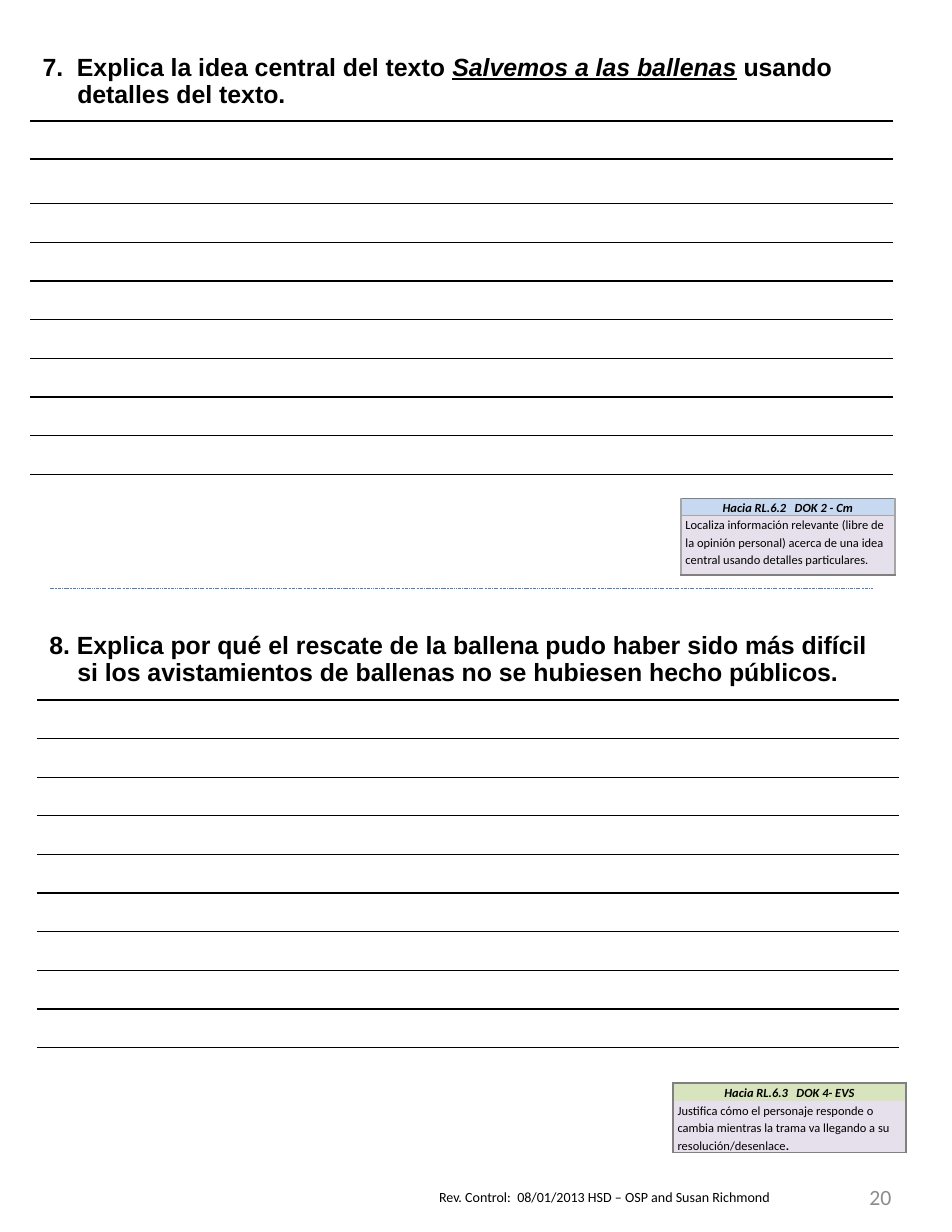
from dataclasses import dataclass

from lxml import etree
from pptx import Presentation
from pptx.dml.color import RGBColor
from pptx.enum.dml import MSO_LINE
from pptx.enum.shapes import MSO_CONNECTOR
from pptx.enum.text import MSO_ANCHOR, PP_ALIGN
from pptx.oxml.ns import qn
from pptx.util import Inches, Pt

STRAIGHT = MSO_CONNECTOR.STRAIGHT
DASHED = MSO_LINE.DASH_DOT_DOT
MIDDLE = MSO_ANCHOR.MIDDLE
TOP = MSO_ANCHOR.TOP
LEFT = PP_ALIGN.LEFT
CENTER = PP_ALIGN.CENTER
RIGHT = PP_ALIGN.RIGHT
BLACK = "000000"
GRAY = "808080"
LIGHT_GRAY = "A6A6A6"
LAVENDER = "E6E0EC"


@dataclass(frozen=True)
class Words:
    text: str
    size: float
    font: str = "Calibri"
    color: str = BLACK
    bold: bool = False
    italic: bool = False
    underline: bool = False


@dataclass(frozen=True)
class Question:
    left: float
    top: float
    indent: float
    prompt: tuple[Words, ...]
    rows: tuple[float, ...]


@dataclass(frozen=True)
class Standard:
    left: float
    top: float
    width: float
    rows: tuple[float, float]
    code: str
    code_fill: str
    goal: tuple[Words, ...]
    side: str
    divider: str | None


def rgb(color: str) -> RGBColor:
    return RGBColor.from_string(color)


def add_words(paragraph, words: tuple[Words, ...]) -> None:
    for part in words:
        run = paragraph.add_run()
        run.text = part.text
        run.font.size = Pt(part.size)
        run.font.name = part.font
        run.font.color.rgb = rgb(part.color)
        run.font.bold = part.bold
        run.font.italic = part.italic
        run.font.underline = part.underline


def set_margins(area, side: float, end: float) -> None:
    area.margin_left = area.margin_right = Inches(side)
    area.margin_top = area.margin_bottom = Inches(end)


def set_borders(cell, left: str | None, right: str | None,
                top: str | None, bottom: str | None) -> None:
    properties = cell._tc.get_or_add_tcPr()
    sides = zip(("lnL", "lnR", "lnT", "lnB"), (left, right, top, bottom))
    for position, (tag, color) in enumerate(sides):
        border = etree.Element(qn(f"a:{tag}"), w=str(Pt(1)))
        if color is None:
            etree.SubElement(border, qn("a:noFill"))
        else:
            fill = etree.SubElement(border, qn("a:solidFill"))
            etree.SubElement(fill, qn("a:srgbClr"), val=color)
        properties.insert(position, border)


def add_column(slide, left: float, top: float, width: float, rows: tuple[float, ...]):
    table = slide.shapes.add_table(len(rows), 1, Inches(left), Inches(top),
                                   Inches(width), Inches(sum(rows))).table
    table.first_row = False
    table.horz_banding = False
    for row, height in zip(table.rows, rows):
        row.height = Inches(height)
    return table


def add_question(slide, question: Question) -> None:
    table = add_column(slide, question.left, question.top, 7.7, question.rows)
    for index in range(len(question.rows)):
        cell = table.cell(index, 0)
        set_margins(cell, 0.11, 0)
        cell.fill.background()
        set_borders(cell, None, None, BLACK if index else None, BLACK)
    heading = table.cell(0, 0)
    set_margins(heading, 0.11, 0.06)
    paragraph = heading.text_frame.paragraphs[0]
    properties = paragraph._p.get_or_add_pPr()
    properties.set("marL", str(Inches(question.indent)))
    properties.set("indent", str(-Inches(question.indent)))
    add_words(paragraph, question.prompt)


def add_standard(slide, standard: Standard) -> None:
    table = add_column(slide, standard.left, standard.top, standard.width, standard.rows)
    code = (Words(standard.code, 8, bold=True, italic=True),)
    parts = (
        (code, standard.code_fill, CENTER, MIDDLE, GRAY, standard.divider),
        (standard.goal, LAVENDER, LEFT, TOP, standard.divider, GRAY),
    )
    for index, (words, fill, align, anchor, above, below) in enumerate(parts):
        cell = table.cell(index, 0)
        set_margins(cell, 0.04, 0)
        cell.vertical_anchor = anchor
        cell.fill.solid()
        cell.fill.fore_color.rgb = rgb(fill)
        set_borders(cell, standard.side, standard.side, above, below)
        paragraph = cell.text_frame.paragraphs[0]
        paragraph.alignment = align
        paragraph.line_spacing = 1.15
        add_words(paragraph, words)


def add_note(slide, left: float, top: float, width: float, height: float,
             words: Words, align: PP_ALIGN, anchor: MSO_ANCHOR) -> None:
    frame = slide.shapes.add_textbox(Inches(left), Inches(top),
                                     Inches(width), Inches(height)).text_frame
    frame.word_wrap = True
    frame.vertical_anchor = anchor
    set_margins(frame, 0.11, 0.05)
    frame.paragraphs[0].alignment = align
    add_words(frame.paragraphs[0], (words,))


def add_separator(slide, left: float, right: float, y: float) -> None:
    separator = slide.shapes.add_connector(STRAIGHT, Inches(left), Inches(y),
                                           Inches(right), Inches(y))
    separator.line.color.rgb = rgb("4B7EBC")
    separator.line.width = Pt(0.25)
    separator.line.dash_style = DASHED
    etree.SubElement(separator._element.spPr, qn("a:effectLst"))


QUESTIONS = (
    Question(0.27, 0.42, 0.31, (
        Words("7.  Explica la idea central del texto ", 16, "Arial", bold=True),
        Words("Salvemos a las ballenas", 16, "Arial", bold=True, italic=True, underline=True),
        Words(" usando detalles del texto.", 16, "Arial", bold=True),
    ), (0.66, 0.34, 0.4) + (0.345,) * 7),
    Question(0.33, 5.58, 0.25, (
        Words("8. Explica por qué el rescate de la ballena pudo haber sido más difícil "
              "si los avistamientos de ballenas no se hubiesen hecho públicos.",
              16, "Arial", bold=True),
    ), (0.67,) + (0.345,) * 9),
)

STANDARDS = (
    Standard(6.01, 9.67, 2.08, (0.16, 0.45), "Hacia RL.6.3   DOK 4- EVS", "D7E4BD", (
        Words("Justifica cómo el personaje responde o cambia mientras la trama "
              "va llegando a su resolución/desenlace", 8),
        Words(".", 8, bold=True),
    ), GRAY, None),
    Standard(6.08, 4.45, 1.91, (0.15, 0.53), "Hacia RL.6.2   DOK 2 - Cm", "C6D9F1", (
        Words("Localiza información relevante (libre de la opinión personal) acerca "
              "de una idea central usando detalles particulares.", 8),
    ), LIGHT_GRAY, LIGHT_GRAY),
)


def main() -> None:
    presentation = Presentation()
    presentation.slide_width = Inches(8.5)
    presentation.slide_height = Inches(11)
    slide = presentation.slides.add_slide(presentation.slide_layouts[6])
    revision = Words("Rev. Control:  08/01/2013 HSD – OSP and Susan Richmond", 9)
    add_note(slide, 3.81, 10.56, 3.81, 0.26, revision, LEFT, TOP)
    add_note(slide, 7.26, 10.39, 0.81, 0.59, Words("20", 14, color="8C8C8C"), RIGHT, MIDDLE)
    for question in QUESTIONS:
        add_question(slide, question)
    for standard in STANDARDS:
        add_standard(slide, standard)
    add_separator(slide, 0.45, 7.79, 5.25)
    presentation.save("out.pptx")


if __name__ == "__main__":
    main()
